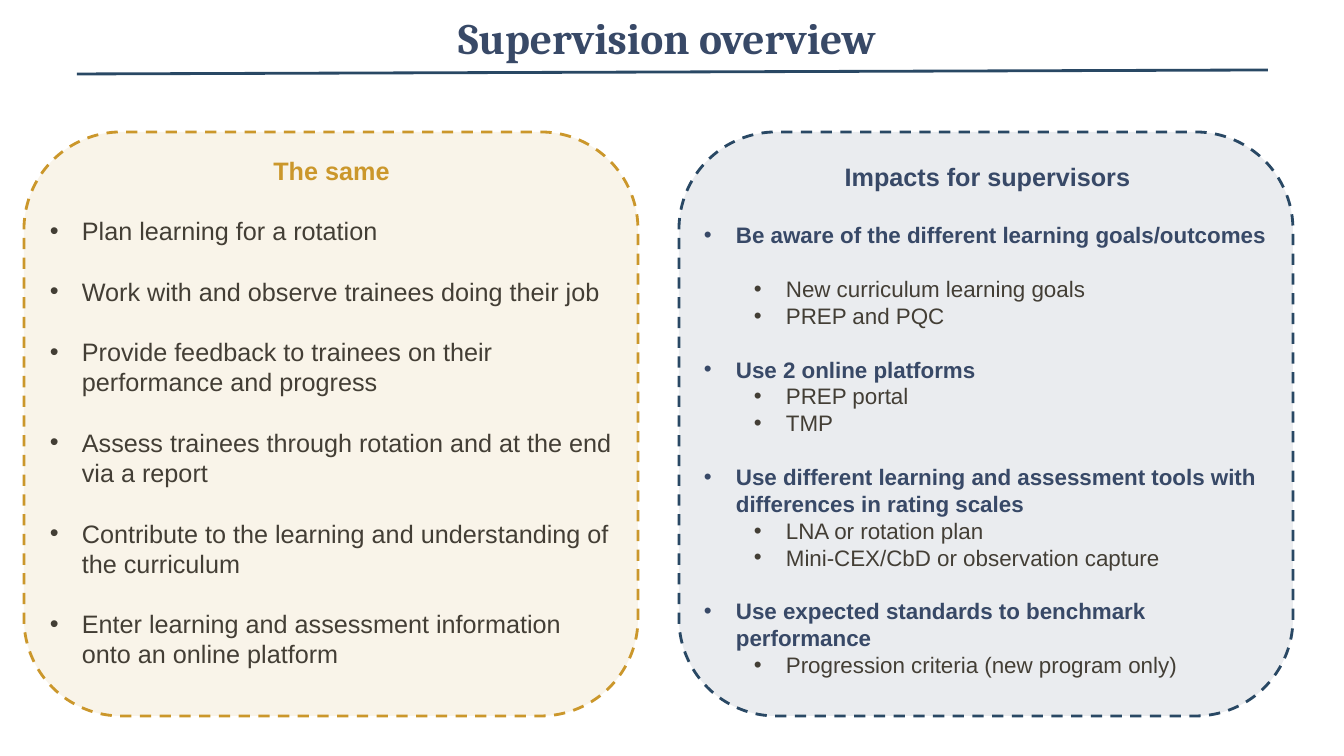
from dataclasses import dataclass

from lxml.etree import SubElement
from pptx import Presentation
from pptx.dml.color import RGBColor
from pptx.enum.dml import MSO_LINE
from pptx.enum.shapes import MSO_CONNECTOR, MSO_SHAPE
from pptx.enum.text import MSO_ANCHOR, PP_ALIGN
from pptx.oxml.ns import qn
from pptx.util import Pt

PX = 914400 / 100.8


@dataclass(frozen=True)
class Theme:
    navy: str = "384967"
    rule: str = "294864"
    gold: str = "CB972B"
    body: str = "433E35"
    heading_font: str = "Cambria"
    body_font: str = "Arial"
    title_size: int = 31
    large: int = 18
    small: int = 16
    line_width: int = 2
    leading: float = 1.2


THEME = Theme()

SAME = [
    "Plan learning for a rotation",
    "Work with and observe trainees doing their job",
    "Provide feedback to trainees on their performance and progress",
    "Assess trainees through rotation and at the end via a report",
    "Contribute to the learning and understanding of the curriculum",
    "Enter learning and assessment information onto an online platform",
]

# Impact, its details, and whether a blank line's gap precedes the details
IMPACTS = [
    ("Be aware of the different learning goals/outcomes",
     ["New curriculum learning goals", "PREP and PQC"], True),
    ("Use 2 online platforms", ["PREP portal", "TMP"], False),
    ("Use different learning and assessment tools with differences in rating scales",
     ["LNA or rotation plan", "Mini-CEX/CbD or observation capture"], False),
    ("Use expected standards to benchmark performance",
     ["Progression criteria (new program only)"], False),
]


def px(value):
    return round(value * PX)


def color(code):
    return RGBColor.from_string(code)


def add_frame(slide, left, top, width, height, anchor=MSO_ANCHOR.TOP):
    frame = slide.shapes.add_textbox(px(left), px(top), px(width), px(height)).text_frame
    frame.word_wrap = True
    frame.vertical_anchor = anchor
    return frame


def write(frame, text, *, size, ink, font=THEME.body_font, bold=False,
          align=PP_ALIGN.LEFT, level=None, gap=0, leading=None):
    """Add a paragraph; a level makes it a bullet, and gap is the space before in points."""
    first = frame.paragraphs[0]
    paragraph = frame.add_paragraph() if first.runs else first
    paragraph.alignment = align
    if gap:
        paragraph.space_before = Pt(gap)
    if leading:
        paragraph.line_spacing = Pt(round(size * leading, 1))
    if level is not None:
        paragraph.level = level
        properties = paragraph._p.get_or_add_pPr()
        properties.set("marL", str(px(32 + 50 * level)))
        properties.set("indent", str(px(-32)))
        SubElement(properties, qn("a:buFont")).set("typeface", THEME.body_font)
        SubElement(properties, qn("a:buChar")).set("char", "•")
    run = paragraph.add_run()
    run.text = text
    run.font.name = font
    run.font.size = Pt(size)
    run.font.bold = bold
    run.font.color.rgb = color(ink)


def add_panel(slide, left, fill, border):
    panel = slide.shapes.add_shape(
        MSO_SHAPE.ROUNDED_RECTANGLE, px(left), px(132), px(614), px(584))
    panel.shadow.inherit = False
    panel.fill.solid()
    panel.fill.fore_color.rgb = color(fill)
    tint = panel.fill._xPr.find(qn("a:solidFill"))[0]
    SubElement(tint, qn("a:alpha")).set("val", "10000")
    panel.line.color.rgb = color(border)
    panel.line.width = Pt(THEME.line_width)
    panel.line.dash_style = MSO_LINE.DASH


def add_title(slide, text):
    frame = add_frame(slide, 62, 0, 1210, 74, MSO_ANCHOR.MIDDLE)
    write(frame, text, size=THEME.title_size, ink=THEME.navy,
          font=THEME.heading_font, bold=True, align=PP_ALIGN.CENTER)
    rule = slide.shapes.add_connector(
        MSO_CONNECTOR.STRAIGHT, px(77), px(74), px(1268), px(70))
    rule.line.color.rgb = color(THEME.rule)
    rule.line.width = Pt(THEME.line_width)
    SubElement(rule._element.spPr, qn("a:effectLst"))


def write_heading(frame, text, ink):
    write(frame, text, size=THEME.large, ink=ink, bold=True,
          align=PP_ALIGN.CENTER, leading=THEME.leading)


def write_same(slide):
    frame = add_frame(slide, 40, 150, 583, 529)
    write_heading(frame, "The same", THEME.gold)
    for task in SAME:
        write(frame, task, size=THEME.large, ink=THEME.body, level=0,
              gap=THEME.large * THEME.leading, leading=THEME.leading)


def write_impacts(slide):
    frame = add_frame(slide, 694, 156, 587, 536)
    write_heading(frame, "Impacts for supervisors", THEME.navy)
    blank_line = THEME.small * THEME.leading
    for index, (impact, details, spaced) in enumerate(IMPACTS):
        gap = blank_line if index else THEME.large * THEME.leading
        write(frame, impact, size=THEME.small, ink=THEME.navy, bold=True,
              level=0, gap=gap, leading=THEME.leading)
        for position, detail in enumerate(details):
            write(frame, detail, size=THEME.small, ink=THEME.body, level=1,
                  gap=blank_line if spaced and position == 0 else 0,
                  leading=THEME.leading)


def main():
    presentation = Presentation()
    presentation.slide_width = px(1344)
    presentation.slide_height = px(756)
    slide = presentation.slides.add_slide(presentation.slide_layouts[6])
    add_title(slide, "Supervision overview")
    add_panel(slide, 24, THEME.gold, THEME.gold)
    write_same(slide)
    add_panel(slide, 679, THEME.navy, THEME.rule)
    write_impacts(slide)
    presentation.save("out.pptx")


if __name__ == "__main__":
    main()
